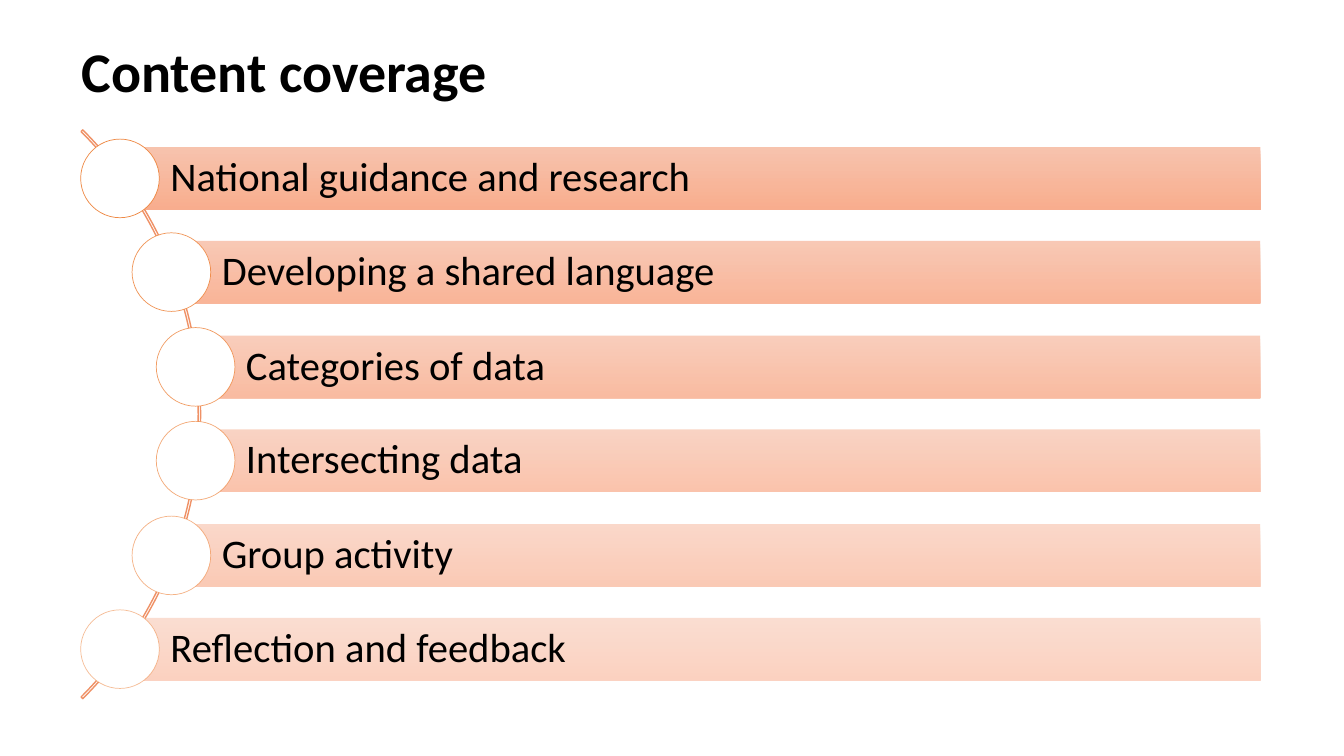
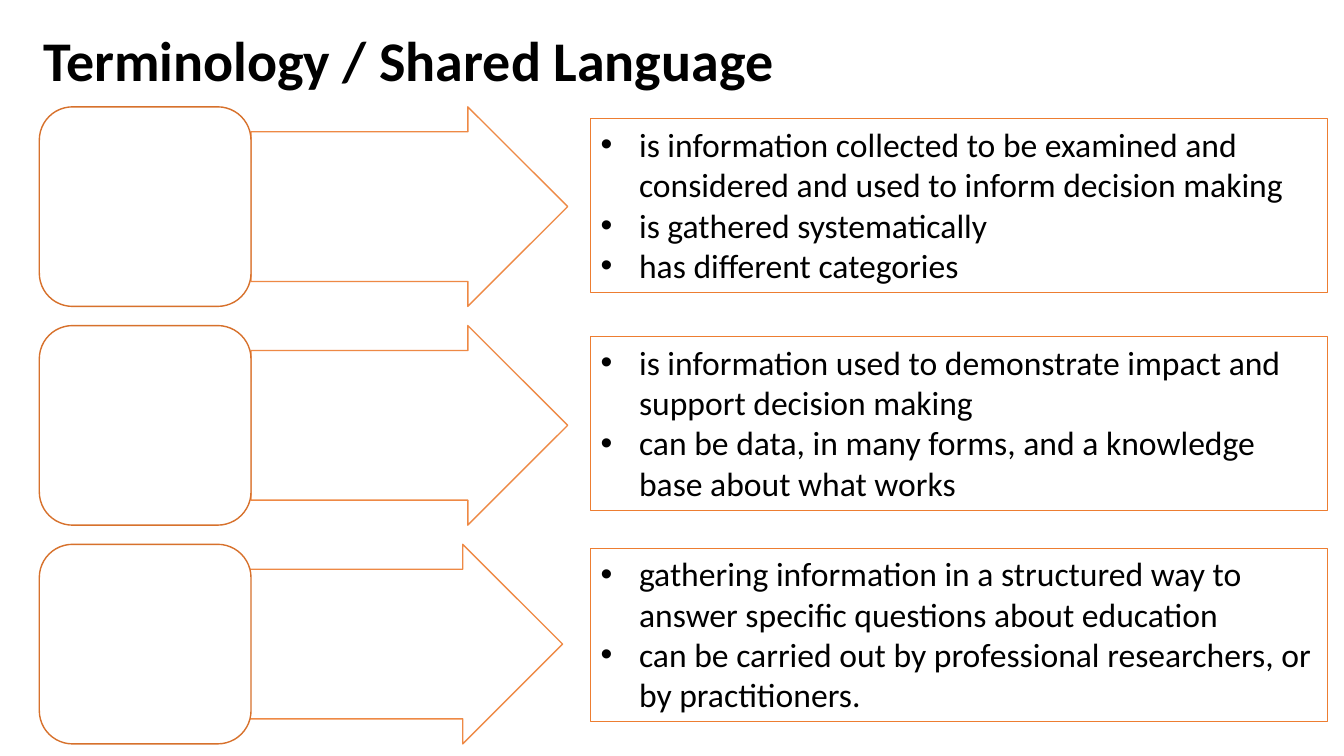
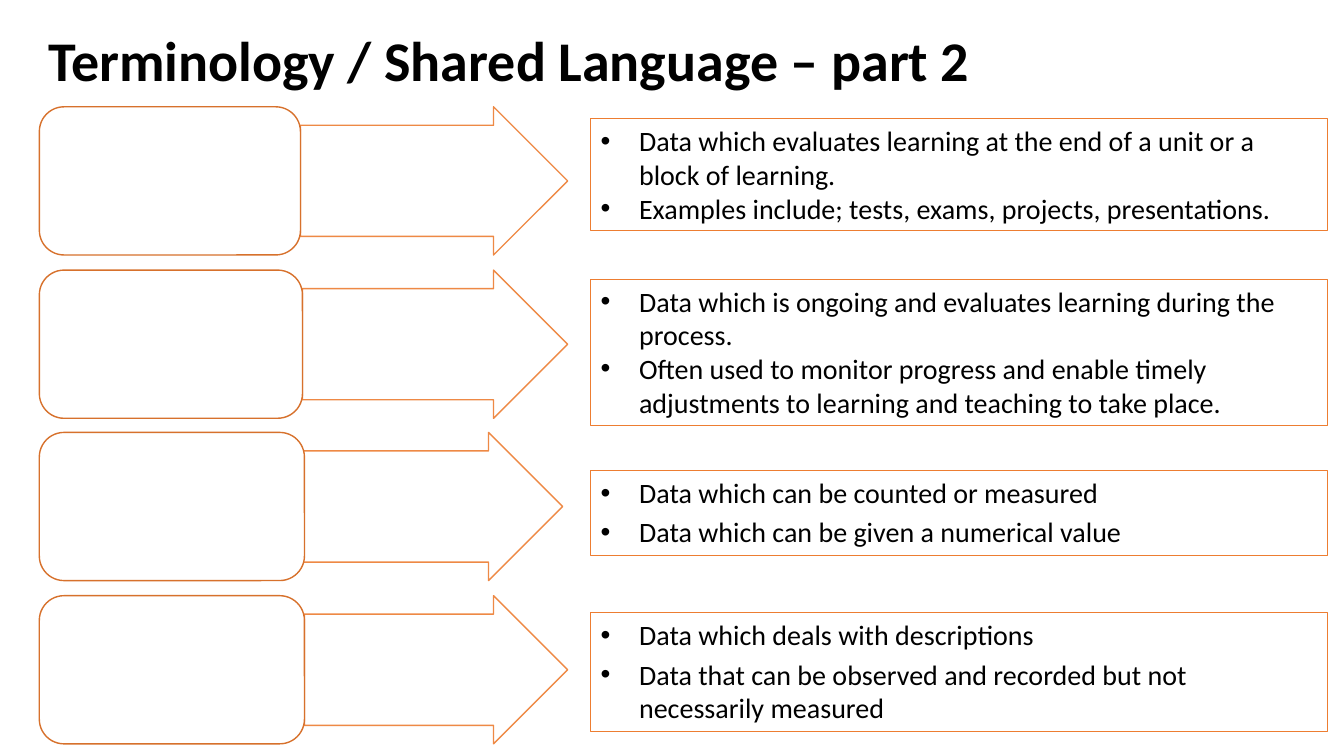
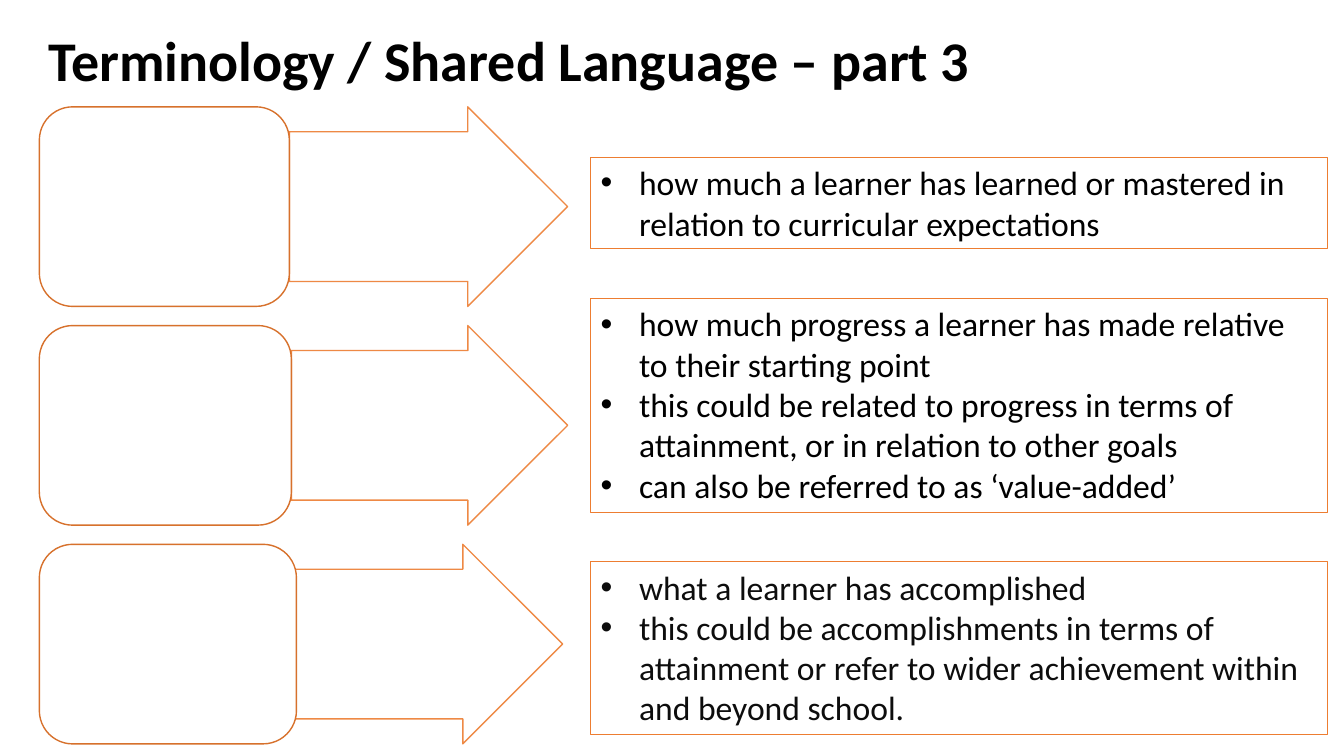
import pptx
import pptx.dml.color
import pptx.enum.shapes
import pptx.enum.text
import pptx.oxml.ns
import pptx.util
from lxml import etree

SHAPES = pptx.enum.shapes.MSO_SHAPE
ANCHOR = pptx.enum.text.MSO_ANCHOR
qn = pptx.oxml.ns.qn


def px(length):
    """Turn px (100 to the inch) into EMU."""
    return pptx.util.Emu(round(length * 9144))


def rgb(value):
    return pptx.dml.color.RGBColor.from_string(value)


def set_opacity(element, percent):
    """Give every colour inside the element the same opacity."""
    for colour in element.iter(qn("a:srgbClr")):
        etree.SubElement(colour, qn("a:alpha"), val=str(percent * 1000))


class Deck:
    FONT = "Calibri"
    TEXT = "000000"
    SOFT_TEXT = "0D0D0D"
    WHITE = "FFFFFF"
    ORANGE = "ED7D31"
    DARK_ORANGE = "D7712C"
    ARC = "EF9166"
    BAR_TOP, BAR_BOTTOM = "F7BDA5", "F8A582"
    BULLET_INDENT = 38

    def __init__(self):
        self.presentation = pptx.Presentation()
        self.presentation.slide_width = px(1333)
        self.presentation.slide_height = px(750)
        self.slide = None

    def new_slide(self):
        layout = self.presentation.slide_layouts[6]
        self.slide = self.presentation.slides.add_slide(layout)

    def shape(self, kind, left, top, width, height, fill=None, line=None, line_width=1):
        shape = self.slide.shapes.add_shape(kind, px(left), px(top), px(width), px(height))
        shape.shadow.inherit = False
        if fill:
            shape.fill.solid()
            shape.fill.fore_color.rgb = rgb(fill)
        else:
            shape.fill.background()
        if line:
            shape.line.color.rgb = rgb(line)
            shape.line.width = pptx.util.Pt(line_width)
        else:
            shape.line.fill.background()
        return shape

    def style(self, paragraph, size, colour=TEXT, bold=False):
        paragraph.alignment = pptx.enum.text.PP_ALIGN.LEFT
        for run in paragraph.runs:
            run.font.name = self.FONT
            run.font.size = pptx.util.Pt(size)
            run.font.bold = bold
            run.font.color.rgb = rgb(colour)

    def title(self, text, left, top, width, height, anchor=ANCHOR.TOP, spacing=0.9):
        box = self.slide.shapes.add_textbox(px(left), px(top), px(width), px(height))
        frame = box.text_frame
        frame.word_wrap = True
        frame.vertical_anchor = anchor
        frame.text = text
        frame.paragraphs[0].line_spacing = spacing
        self.style(frame.paragraphs[0], 40, bold=True)

    def arc(self, left, top, diameter):
        arc = self.shape(SHAPES.BLOCK_ARC, left, top, diameter, diameter, line=self.ARC)
        for index, value in enumerate((189, 27, 0.003)):
            arc.adjustments[index] = value

    def agenda_item(self, text, left, top, opacity):
        bar = self.shape(SHAPES.RECTANGLE, left, top, 1250 - left, 62)
        bar.fill.gradient()
        bar.fill.gradient_angle = 270
        for stop, colour in zip(bar.fill.gradient_stops, (self.BAR_TOP, self.BAR_BOTTOM)):
            stop.color.rgb = rgb(colour)
        set_opacity(bar.element.spPr, opacity)
        frame = bar.text_frame
        frame.word_wrap = True
        frame.vertical_anchor = ANCHOR.MIDDLE
        frame.margin_left = px(50)
        frame.margin_top = frame.margin_right = frame.margin_bottom = px(8)
        frame.text = text
        frame.paragraphs[0].line_spacing = 0.9
        self.style(frame.paragraphs[0], 29)
        circle = self.shape(SHAPES.OVAL, left - 39, top - 8, 78, 78,
                            self.WHITE, self.ORANGE, 0.5)
        set_opacity(circle.element.spPr.find(qn("a:ln")), opacity)

    def term(self, top, height, width, shift):
        """Draw a rounded term box and the arrow that leaves it."""
        left, tip = 39, 563
        right = left + width
        arrow = self.shape(SHAPES.RIGHT_ARROW, right + shift, top, tip - right, height,
                           self.WHITE, self.ORANGE)
        arrow.adjustments[0] = 0.75
        arrow.adjustments[1] = 0.5
        set_opacity(arrow.element.spPr, 90)
        self.shape(SHAPES.ROUNDED_RECTANGLE, left, top, width, height,
                   self.WHITE, self.DARK_ORANGE)

    def definition(self, top, height, lines, size, space_before=0, colour=TEXT):
        box = self.shape(SHAPES.RECTANGLE, 586, top, 731, height,
                         line=self.ORANGE, line_width=0.75)
        frame = box.text_frame
        frame.word_wrap = True
        frame.auto_size = pptx.enum.text.MSO_AUTO_SIZE.SHAPE_TO_FIT_TEXT
        frame.vertical_anchor = ANCHOR.TOP
        frame.text = "\n".join(lines)
        for paragraph in frame.paragraphs:
            paragraph.space_before = pptx.util.Pt(space_before)
            self.style(paragraph, size, colour)
            self.bullet(paragraph)

    def bullet(self, paragraph):
        properties = paragraph._p.get_or_add_pPr()
        properties.set("marL", str(px(self.BULLET_INDENT)))
        properties.set("indent", str(-px(self.BULLET_INDENT)))
        etree.SubElement(properties, qn("a:buFont"), typeface="Arial")
        etree.SubElement(properties, qn("a:buChar"), char="•")

    def agenda_slide(self, title, items):
        self.new_slide()
        self.title(title, 71, 43, 580, 54, ANCHOR.MIDDLE, 1.0)
        self.arc(-599, 12, 798)
        for index, (text, left) in enumerate(items):
            self.agenda_item(text, left, 146 + index * 187 // 2, 90 - 8 * index)

    def terminology_slide(self, title, title_left, size, terms, definitions):
        """Share the height among the terms, with gaps of a tenth of a term."""
        self.new_slide()
        self.title(title, title_left, 28, 956, 50)
        count = len(terms)
        height = 632 / (count + 0.1 * (count - 1))
        for index, (width, shift) in enumerate(terms):
            self.term(round(106 + 1.1 * height * index), round(height), width, shift)
        for top, box_height, lines, *options in definitions:
            self.definition(top, box_height, lines, size, *options)


def main():
    deck = Deck()
    deck.agenda_slide("Content coverage", [
        ("National guidance and research", 119),
        ("Developing a shared language", 170),
        ("Categories of data", 194),
        ("Intersecting data", 194),
        ("Group activity", 170),
        ("Reflection and feedback", 119),
    ])
    deck.terminology_slide(
        "Terminology / Shared Language", 33, 24,
        [(210, 0), (210, 0), (210, -5)],
        [
            (118, 172, ["is information collected to be examined and considered "
                        "and used to inform decision making",
                        "is gathered systematically",
                        "has different categories"]),
            (334, 172, ["is information used to demonstrate impact and support "
                        "decision making",
                        "can be data, in many forms, and a knowledge base about "
                        "what works"]),
            (544, 172, ["gathering information in a structured way to answer "
                        "specific questions about education",
                        "can be carried out by professional researchers, or by "
                        "practitioners."]),
        ])
    deck.terminology_slide(
        "Terminology / Shared Language – part 2", 38, 20,
        [(259, 0), (261, 0), (263, -5), (263, 0)],
        [
            (118, 111, ["Data which evaluates learning at the end of a unit or a "
                        "block of learning.",
                        "Examples include; tests, exams, projects, presentations."]),
            (277, 145, ["Data which is ongoing and evaluates learning during the "
                        "process.",
                        "Often used to monitor progress and enable timely "
                        "adjustments to learning and teaching to take place."]),
            (467, 84, ["Data which can be counted or measured",
                       "Data which can be given a numerical value"], 4),
            (608, 118, ["Data which deals with descriptions",
                        "Data that can be observed and recorded but not "
                        "necessarily measured"], 4),
        ])
    deck.terminology_slide(
        "Terminology / Shared Language – part 3", 38, 24,
        [(248, 0), (250, 0), (255, -5)],
        [
            (156, 91, ["how much a learner has learned or mastered in relation to "
                       "curricular expectations"]),
            (296, 212, ["how much progress a learner has made relative to their "
                        "starting point",
                        "this could be related to progress in terms of attainment, "
                        "or in relation to other goals",
                        "can also be referred to as ‘value-added’"]),
            (557, 172, ["what a learner has accomplished",
                        "this could be accomplishments in terms of attainment or "
                        "refer to wider achievement within and beyond school."],
             0, Deck.SOFT_TEXT),
        ])
    deck.presentation.save("out.pptx")


if __name__ == "__main__":
    main()
